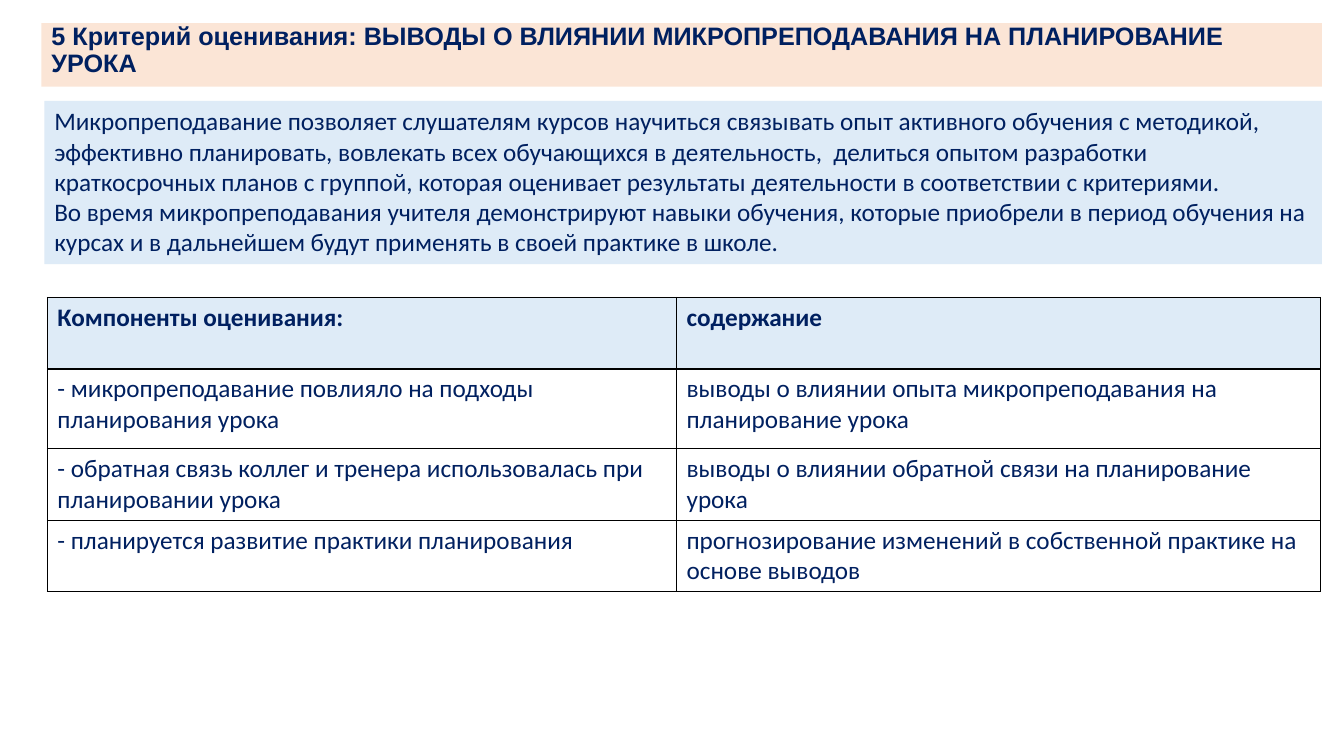
from lxml.etree import SubElement
from pptx import Presentation
from pptx.dml.color import RGBColor
from pptx.enum.shapes import MSO_SHAPE
from pptx.enum.text import MSO_ANCHOR as ANCHOR, MSO_AUTO_SIZE as AUTO, PP_ALIGN as ALIGN
from pptx.oxml.ns import qn
from pptx.util import Pt

PX = 9144
COLORS = {"ink": "002060", "peach": "FBE5D6", "sky": "DEEBF7", "border": "000000"}

TITLE = "5 Критерий оценивания: ВЫВОДЫ О ВЛИЯНИИ МИКРОПРЕПОДАВАНИЯ НА ПЛАНИРОВАНИЕ УРОКА"
INTRO = [
    "Микропреподавание позволяет слушателям курсов научиться связывать опыт активного обучения "
    "с методикой, эффективно планировать, вовлекать всех обучающихся в деятельность,  делиться "
    "опытом разработки краткосрочных планов с группой, которая оценивает результаты деятельности "
    "в соответствии с критериями.",
    "Во время микропреподавания учителя демонстрируют навыки обучения, которые приобрели в период "
    "обучения на курсах и в дальнейшем будут применять в своей практике в школе.",
]
CRITERIA = [
    ("Компоненты оценивания:", "содержание"),
    ("- микропреподавание повлияло на подходы планирования урока",
     "выводы о влиянии опыта микропреподавания на планирование урока"),
    ("- обратная связь коллег и тренера использовалась при планировании урока",
     "выводы о влиянии обратной связи на планирование урока"),
    ("- планируется развитие практики планирования",
     "прогнозирование изменений в собственной практике на основе выводов"),
]
COL_WIDTHS = [624, 639]
ROW_HEIGHTS = [71, 79, 71, 71]


def px(*lengths):
    return [n * PX for n in lengths]


def paint(fill, color):
    fill.solid()
    fill.fore_color.rgb = RGBColor.from_string(COLORS[color])


def write(p, text, font="Calibri", bold=False):
    p.alignment = ALIGN.LEFT
    r = p.add_run()
    r.text = text
    r.font.name = font
    r.font.size = Pt(18)
    r.font.bold = bold
    r.font.color.rgb = RGBColor.from_string(COLORS["ink"])


def add_title(s, box, text):
    sp = s.shapes.title
    sp.left, sp.top, sp.width, sp.height = px(*box)
    paint(sp.fill, "peach")
    tf = sp.text_frame
    tf.auto_size = AUTO.NONE
    tf.word_wrap = True
    tf.vertical_anchor = ANCHOR.MIDDLE
    tf.margin_bottom = 13 * PX
    p = tf.paragraphs[0]
    p.line_spacing = 0.9
    write(p, text, "Arial", True)


def add_panel(s, box, paragraphs):
    sp = s.shapes.add_shape(MSO_SHAPE.RECTANGLE, *px(*box))
    sp.shadow.inherit = False
    paint(sp.fill, "sky")
    sp.line.fill.background()
    tf = sp.text_frame
    tf.word_wrap = True
    tf.vertical_anchor = ANCHOR.TOP
    tf.auto_size = AUTO.SHAPE_TO_FIT_TEXT
    for i, text in enumerate(paragraphs):
        write(tf.add_paragraph() if i else tf.paragraphs[0], text)


def add_borders(cell):
    tcPr = cell._tc.get_or_add_tcPr()
    for i, side in enumerate(("a:lnL", "a:lnR", "a:lnT", "a:lnB")):
        ln = tcPr.makeelement(qn(side), {"w": str(Pt(1))})
        tcPr.insert(i, ln)
        fill = SubElement(ln, qn("a:solidFill"))
        SubElement(fill, qn("a:srgbClr"), val=COLORS["border"])


def add_criteria_table(s, left, top, rows):
    box = px(left, top, sum(COL_WIDTHS), sum(ROW_HEIGHTS))
    table = s.shapes.add_table(len(rows), len(COL_WIDTHS), *box).table
    for col, width in zip(table.columns, COL_WIDTHS):
        col.width = width * PX
    for i, texts in enumerate(rows):
        table.rows[i].height = ROW_HEIGHTS[i] * PX
        for j, text in enumerate(texts):
            cell = table.cell(i, j)
            if i == 0:
                paint(cell.fill, "sky")
            else:
                cell.fill.background()
            add_borders(cell)
            write(cell.text_frame.paragraphs[0], text, bold=i == 0)


def main():
    prs = Presentation()
    prs.slide_width, prs.slide_height = px(1333, 750)
    s = prs.slides.add_slide(prs.slide_layouts[5])
    add_title(s, (41, 23, 1270, 63), TITLE)
    add_criteria_table(s, 47, 295, CRITERIA)
    add_panel(s, (44, 100, 1267, 162), INTRO)
    prs.save("out.pptx")


if __name__ == "__main__":
    main()
